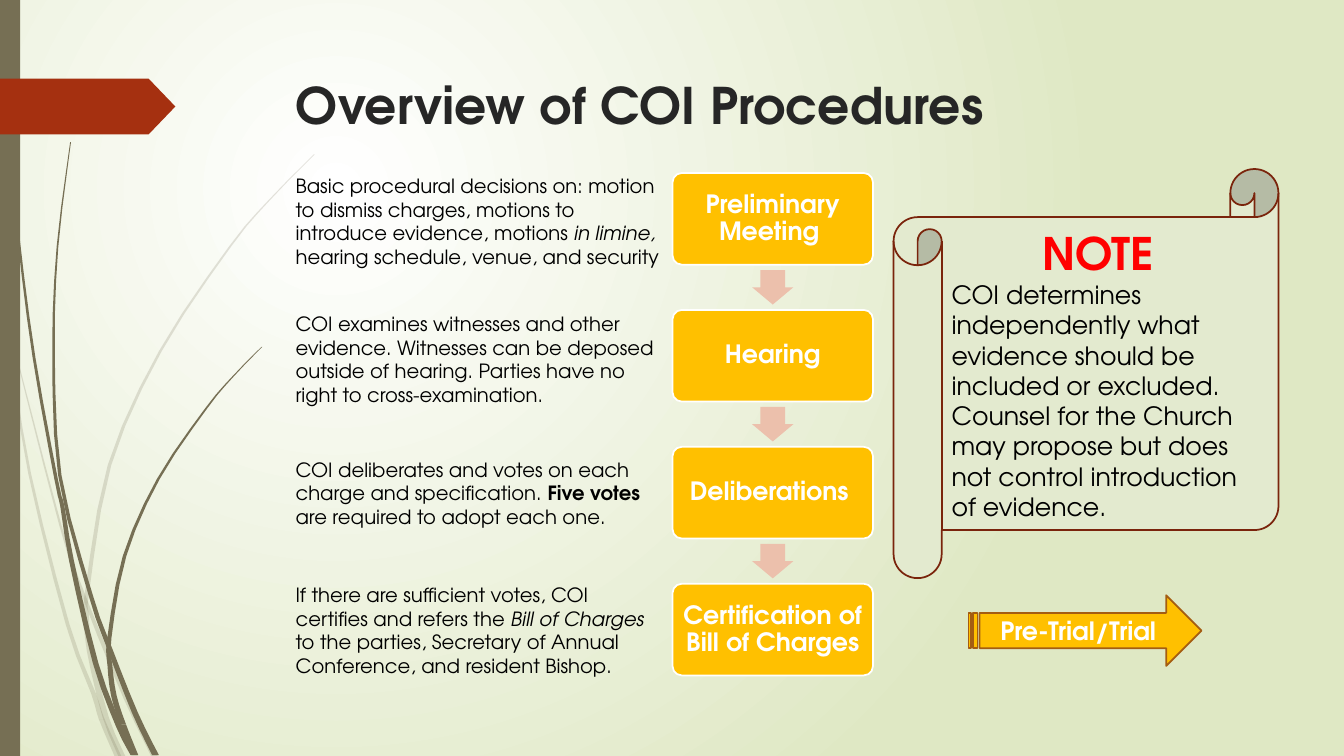
from lxml import etree
from pptx import Presentation
from pptx.dml.color import RGBColor as RGB
from pptx.enum.shapes import MSO_SHAPE as Kind
from pptx.enum.text import MSO_ANCHOR as Anchor, PP_ALIGN as Align
from pptx.oxml.ns import qn
from pptx.util import Cm, Pt

# Content: each detail is a list of (text, style) runs
TITLE = "Overview of COI Procedures"
STEPS = [
    ("Preliminary Meeting ", 4.26, [
        ("Basic procedural decisions on: motion to dismiss charges, motions "
         "to introduce evidence, motions ", ""),
        ("in limine, ", "i"),
        ("hearing schedule, venue, and security", "")]),
    ("Hearing", 7.74, [
        ("COI examines witnesses and other evidence. Witnesses can be deposed "
         "outside of hearing. Parties have no right to cross-examination.", "")]),
    ("Deliberations ", 11.41, [
        ("COI deliberates and votes on each charge and specification. ", ""),
        ("Five votes ", "b"),
        ("are required to adopt each one.", "")]),
    ("Certification of Bill of Charges", 14.57, [
        ("If there are sufficient votes, COI certifies and refers the ", ""),
        ("Bill of Charges ", "i"),
        ("to the parties, Secretary of Annual Conference, and resident Bishop.", "")]),
]
NOTE = "NOTE"
RULES = [
    "COI determines independently what evidence should be included or excluded.",
    "Counsel for the Church may propose but does not control introduction of evidence.",
]
NEXT = "Pre-Trial/Trial "

# Grass blades: points from tip to root in cm, and the points where pieces meet
PALE = [
    ([(0, 7.37), (0.25, 8.85), (0.75, 11.94), (1.71, 15.75), (2.36, 17.48),
      (2.57, 18.14), (2.97, 19.05)], (0, 1, 5, 6)),
    ([(0.36, 8.76), (1.52, 13.23), (2.18, 15.19), (3.18, 17.6), (3.89, 19.05)],
     (0, 2, 4)),
    ([(7.92, 3.89), (6.81, 5.02), (5.8, 6.21), (4.04, 8.85), (2.76, 11.72),
      (2.2, 14.88), (2.18, 15.49), (2.26, 16.41), (2.66, 18.06), (3.07, 19.05)],
     (0, 5, 6, 8, 9)),
]
DARK = [
    ([(0.08, 0), (0.18, 2.79), (0.46, 5.92), (0.86, 9.02), (1.43, 12.15),
      (1.57, 12.75), (1.8, 14.12), (2.41, 16.71), (3, 18.3), (3.38, 19.03)],
     (0, 4, 5, 8, 9)),
    ([(1.78, 3.58), (1.45, 6.22), (1.35, 8.86), (1.51, 11.99), (2.29, 15.01),
      (2.76, 16.33), (3.4, 17.96), (3.92, 19.03)], (0, 3, 5, 7)),
    ([(6.6, 8.74), (5.87, 9.49), (5.19, 10.3), (3.99, 12.07), (3.14, 14.01),
      (2.76, 16.05), (2.77, 16.76), (2.87, 17.53), (3.1, 18.26), (3.4, 19.03)],
     (0, 5, 6, 8, 9)),
]

FONT = "TeX Gyre Adventor"
WHITE = RGB(0xFF, 0xFF, 0xFF)
BLACK = RGB(0, 0, 0)
INK = RGB(0x26, 0x26, 0x26)
GREEN = RGB(0xDF, 0xE8, 0xC4)
OLIVE = RGB(0x76, 0x6F, 0x54)
RUST = RGB(0xA5, 0x30, 0x10)
GOLD = RGB(0xFF, 0xC0, 0x00)
PINK = RGB(0xEC, 0xC0, 0xAC)
BROWN = RGB(0xA4, 0x5D, 0x12)
PAPER = RGB(0xE3, 0xEA, 0xCF)
MAROON = RGB(0x7A, 0x24, 0x0C)
RED = RGB(0xFF, 0, 0)

deck = Presentation()
deck.slide_width, deck.slide_height = Cm(33.87), Cm(19.05)
slide = deck.slides.add_slide(deck.slide_layouts[6])
shapes = slide.shapes


def paint(shape, fill, line=None):
    shape.shadow.inherit = False
    shape.fill.solid()
    shape.fill.fore_color.rgb = fill
    if line is None:
        shape.line.fill.background()
    else:
        shape.line.color.rgb = line
        shape.line.width = Pt(1.25)
    return shape


def draw(kind, box, fill, line=None, adj=()):
    shape = paint(shapes.add_shape(kind, *map(Cm, box)), fill, line)
    for i, value in enumerate(adj):
        shape.adjustments[i] = value
    return shape


def label(box):
    return shapes.add_textbox(*map(Cm, box))


def write(shape, runs, size=18, color=BLACK, align=Align.LEFT, space=1.0,
          anchor=Anchor.TOP, side=0.25, more=False):
    """Add one paragraph; runs is a list of (text, style)."""
    frame = shape.text_frame
    frame.word_wrap = True
    frame.vertical_anchor = anchor
    frame.margin_left = frame.margin_right = Cm(side)
    para = frame.add_paragraph() if more else frame.paragraphs[0]
    para.alignment = align
    para.line_spacing = space
    for text, style in runs:
        run = para.add_run()
        run.text = text
        font = run.font
        font.name, font.size = FONT, Pt(size)
        font.color.rgb = color
        font.bold, font.italic = "b" in style, "i" in style


def smooth(points, parts):
    """Run a Catmull-Rom curve through the points."""
    ends = [points[0], *points, points[-1]]
    curve = []
    for a, b, c, d in zip(ends, ends[1:], ends[2:], ends[3:]):
        for n in range(parts):
            t = n / parts
            curve.append(tuple(
                q + t * (r - p) / 2 + t * t * (2 * p - 5 * q + 4 * r - s) / 2
                + t ** 3 * (3 * q - p - 3 * r + s) / 2
                for p, q, r, s in zip(a, b, c, d)))
    return curve + [points[-1]]


def blade(points, cuts, alpha=None, parts=3):
    curve = smooth(points, parts)
    half = [0.01 + 0.08 * i / len(curve) for i in range(len(curve))]
    left = [(Cm(x - h), Cm(y)) for (x, y), h in zip(curve, half)]
    right = [(Cm(x + h), Cm(y)) for (x, y), h in zip(curve, half)]
    for a, b in zip(cuts, cuts[1:]):
        part = slice(a * parts, b * parts + 1)
        edge = left[part] + right[part][::-1]
        form = shapes.build_freeform(*edge[0])
        form.add_line_segments(edge[1:], close=True)
        shape = paint(form.convert_to_shape(), OLIVE)
        if alpha:
            tone = shape.element.spPr.find(qn("a:solidFill"))[0]
            etree.SubElement(tone, qn("a:alpha"), val=str(alpha * 1000))


# Background: round gradient with its centre at upper left
back = slide.background.fill
back.gradient()
for stop, color in zip(back.gradient_stops, (WHITE, GREEN)):
    stop.color.rgb = color
grad = slide.element.find(".//" + qn("a:gradFill"))
grad.remove(grad.find(qn("a:lin")))
ring = etree.SubElement(grad, qn("a:path"), path="circle")
etree.SubElement(ring, qn("a:fillToRect"), l="50000", t="50000",
                 r="100000", b="100000")

# Grass, side bar and ribbon
for points, cuts in PALE:
    blade(points, cuts, alpha=20)
for points, cuts in DARK:
    blade(points, cuts)
draw(Kind.RECTANGLE, (0, 0, 0.51, 19.05), OLIVE)
draw(Kind.PENTAGON, (0, 1.98, 4.42, 1.41), RUST, adj=[0.48])

# Title
write(label((7.21, 1.74, 24.77, 3.56)), [(TITLE, "b")], size=36, color=INK)

# Steps with their arrows and details
LEFT, TOP, WIDE, HIGH, PITCH = 16.95, 4.36, 5.05, 2.31, 3.45
HEAD_W, HEAD_H = 1.04, 0.87
for i, (name, y, detail) in enumerate(STEPS):
    top = TOP + i * PITCH
    step = draw(Kind.ROUNDED_RECTANGLE, (LEFT, top, WIDE, HIGH), GOLD, WHITE, [0.1])
    write(step, [(name, "b")], color=WHITE, align=Align.CENTER, space=0.9,
          anchor=Anchor.MIDDLE, side=0.18)
    if i < len(STEPS) - 1:
        gap = (PITCH - HIGH - HEAD_H) / 2
        draw(Kind.DOWN_ARROW, (LEFT + (WIDE - HEAD_W) / 2, top + HIGH + gap,
                               HEAD_W, HEAD_H), PINK, adj=[0.6, 0.5])
    write(label((7.2, y, 9.7, 2.64)), detail, size=14)

# Next stage
arrow = draw(Kind.STRIPED_RIGHT_ARROW, (24.41, 15, 5.87, 1.78), GOLD, BROWN)
write(arrow, [(NEXT, "b")], color=WHITE, align=Align.CENTER, anchor=Anchor.MIDDLE)

# Note on a scroll
scroll = draw(Kind.HORIZONTAL_SCROLL, (22.52, 4.26, 9.7, 10.31), PAPER, MAROON)
write(scroll, [(NOTE, "b")], size=32, color=RED, align=Align.CENTER,
      anchor=Anchor.MIDDLE)
for rule in RULES:
    write(scroll, [(rule, "")], anchor=Anchor.MIDDLE, more=True)

deck.save("out.pptx")
